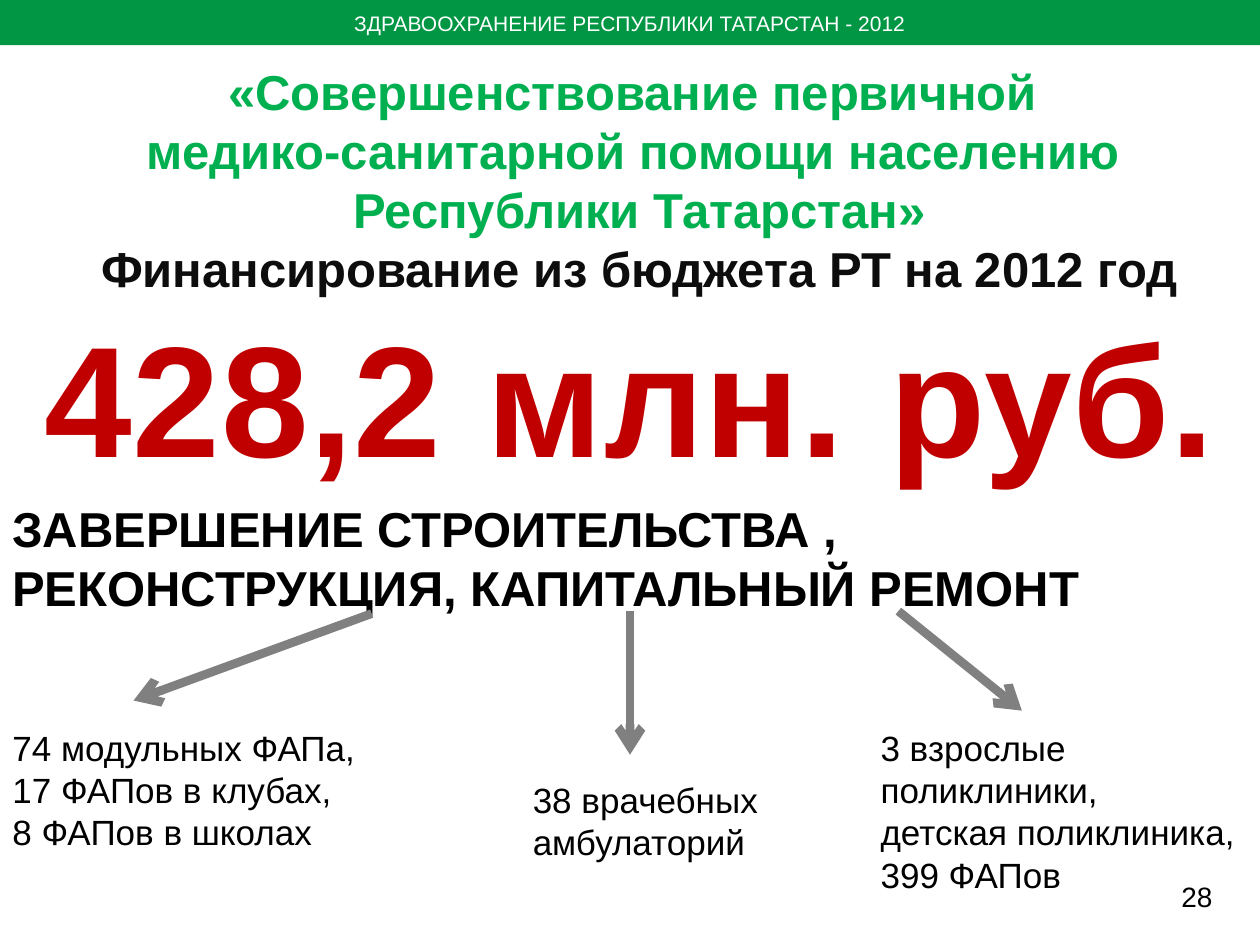
from lxml.etree import SubElement
from pptx import Presentation
from pptx.dml.color import RGBColor
from pptx.enum.shapes import MSO_CONNECTOR as Connector, MSO_SHAPE as Shape
from pptx.enum.text import MSO_ANCHOR as Anchor, PP_ALIGN as Align
from pptx.oxml.ns import qn
from pptx.util import Inches, Pt

WHITE = RGBColor(0xFF, 0xFF, 0xFF)
BLACK = RGBColor(0x00, 0x00, 0x00)
INK = RGBColor(0x0D, 0x0D, 0x0D)
GREEN = RGBColor(0x00, 0xB0, 0x50)
BANNER_GREEN = RGBColor(0x00, 0x96, 0x44)
RED = RGBColor(0xC0, 0x00, 0x00)
GREY = RGBColor(0x80, 0x80, 0x80)

WIDTH, HEIGHT = Inches(10), Inches(7.5)
COLUMN, ROW = WIDTH / 100, HEIGHT / 75


def place(*cells):
    return [round(cell * unit) for cell, unit in zip(cells, (COLUMN, ROW) * 2)]


def write(frame, lines, size, color, align=Align.LEFT, bold=False):
    spans = []
    for index, line in enumerate(lines):
        para = frame.paragraphs[0] if index == 0 else frame.add_paragraph()
        para.alignment = align
        span = para.add_run()
        span.text = line
        span.font.name = "Arial"
        span.font.size = Pt(size)
        span.font.bold = bold
        span.font.color.rgb = color
        spans.append(span)
    return spans


def add_text(page, box, lines, size, color=BLACK, align=Align.LEFT, bold=False):
    frame = page.shapes.add_textbox(*place(*box)).text_frame
    frame.word_wrap = True
    return write(frame, lines, size, color, align, bold)


def add_banner(page, box):
    banner = page.shapes.add_shape(Shape.RECTANGLE, *place(*box))
    banner.shadow.inherit = False
    banner.fill.solid()
    banner.fill.fore_color.rgb = BANNER_GREEN
    banner.line.fill.background()
    frame = banner.text_frame
    frame.word_wrap = False
    frame.vertical_anchor = Anchor.MIDDLE
    write(frame, ["ЗДРАВООХРАНЕНИЕ РЕСПУБЛИКИ ТАТАРСТАН - 2012"], 12, WHITE, Align.CENTER)


def add_title(page, box):
    lines = [
        "«Совершенствование первичной ",
        "медико-санитарной помощи населению ",
        "Республики Татарстан»",
        "Финансирование из бюджета РТ на 2012 год",
    ]
    spans = add_text(page, box, lines, 28, GREEN, Align.CENTER, True)
    spans[-1].font.color.rgb = INK


def add_amount(page, box):
    for span in add_text(page, box, ["428,2 млн. руб."], 90, RED, Align.CENTER, True):
        span.font._element.set("spc", "50")


def add_arrow(page, start, end):
    arrow = page.shapes.add_connector(Connector.STRAIGHT, *place(*start), *place(*end))
    arrow.line.color.rgb = GREY
    arrow.line.width = Pt(5)
    SubElement(arrow.line._get_or_add_ln(), qn("a:tailEnd"), type="arrow")
    SubElement(arrow._element.spPr, qn("a:effectLst"))


def add_branch(page, start, end, box, lines):
    add_arrow(page, start, end)
    add_text(page, box, lines, 20)


def main():
    deck = Presentation()
    deck.slide_width, deck.slide_height = WIDTH, HEIGHT
    page = deck.slides.add_slide(deck.slide_layouts[6])

    add_title(page, (5.1, 4.4, 91.3, 24.6))
    add_amount(page, (2, 23.3, 96.1, 16.2))
    works = "ЗАВЕРШЕНИЕ СТРОИТЕЛЬСТВА , РЕКОНСТРУКЦИЯ, КАПИТАЛЬНЫЙ РЕМОНТ"
    add_text(page, (0, 39.1, 100, 7.1), [works], 28, bold=True)

    branches = [
        ((29.5, 48.7), (10.6, 55.6), (0, 57.2, 29.5, 11.1),
         ["74 модульных ФАПа,", "17 ФАПов в клубах,", "8 ФАПов в школах"]),
        ((50, 48.5), (50, 59.9), (41.3, 61.3, 22.8, 7.7),
         ["38 врачебных амбулаторий"]),
        ((71.3, 48.5), (81.1, 56.4), (68.9, 57.2, 31.1, 14.5),
         ["3 взрослые поликлиники,", "детская поликлиника,", "399 ФАПов"]),
    ]
    for branch in branches:
        add_branch(page, *branch)

    add_banner(page, (0, 0, 100, 3.6))
    add_text(page, (73.9, 69.3, 23.3, 5.2), ["28"], 16, align=Align.RIGHT)
    deck.save("out.pptx")


if __name__ == "__main__":
    main()
